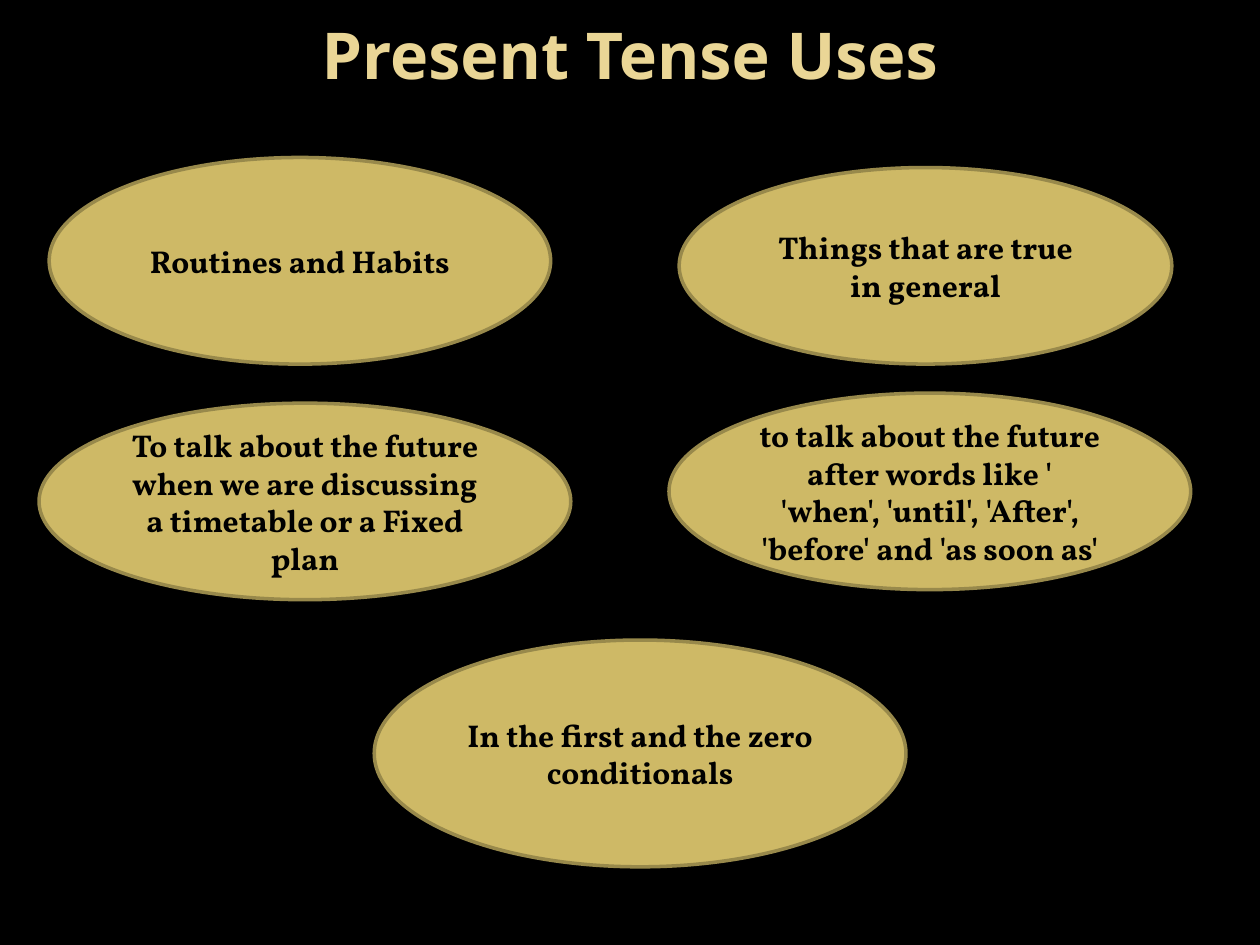
import dataclasses

import lxml.etree
import pptx
import pptx.dml.color
import pptx.enum.shapes
import pptx.enum.text
import pptx.oxml.ns
import pptx.slide
import pptx.text.text
import pptx.util

COLORS = {
    "background": "000000",
    "title": "EAD696",
    "oval": "CEB966",
    "outline": "98894B",
    "text": "000000",
}


@dataclasses.dataclass
class Use:
    wording: str
    left: float
    top: float
    width: float
    height: float = 1.56


USES = [
    Use("Routines and Habits", 0.39, 1.25, 3.98, 1.64),
    Use("Things that are true in general", 5.39, 1.33, 3.91),
    Use("In the first and the zero conditionals", 2.97, 5.08, 4.22, 1.8),
    Use("To talk about the future when we are discussing a timetable or a Fixed plan",
        0.31, 3.2, 4.22),
    Use("to talk about the future after words like ' 'when', 'until', 'After', "
        "'before' and 'as soon as'", 5.31, 3.12, 4.14),
]


def color(name: str) -> pptx.dml.color.RGBColor:
    return pptx.dml.color.RGBColor.from_string(COLORS[name])


def write(frame: pptx.text.text.TextFrame, wording: str, font: str,
          size: float, color_name: str) -> None:
    frame.word_wrap = True
    frame.vertical_anchor = pptx.enum.text.MSO_ANCHOR.MIDDLE
    paragraph = frame.paragraphs[0]
    paragraph.alignment = pptx.enum.text.PP_ALIGN.CENTER
    run = paragraph.add_run()
    run.text = wording
    run.font.name = font
    run.font.size = pptx.util.Pt(size)
    run.font.bold = True
    run.font.color.rgb = color(color_name)


def add_title(slide: pptx.slide.Slide, wording: str) -> None:
    heading = slide.shapes.title
    heading.left, heading.top = pptx.util.Inches(0.5), pptx.util.Inches(0.3)
    heading.width, heading.height = pptx.util.Inches(9), pptx.util.Inches(0.79)
    write(heading.text_frame, wording, "Noto Sans", 36.9, "title")
    paragraph = heading.text_frame.paragraphs[0]
    paragraph.add_line_break()
    line_break = paragraph._p[-1]
    lxml.etree.SubElement(line_break, pptx.oxml.ns.qn("a:rPr"), sz="3200")
    lxml.etree.SubElement(paragraph._p, pptx.oxml.ns.qn("a:endParaRPr"), sz="3200")


def add_use(slide: pptx.slide.Slide, use: Use) -> None:
    oval = slide.shapes.add_shape(
        pptx.enum.shapes.MSO_SHAPE.OVAL,
        pptx.util.Inches(use.left), pptx.util.Inches(use.top),
        pptx.util.Inches(use.width), pptx.util.Inches(use.height))
    oval.shadow.inherit = False
    oval.fill.solid()
    oval.fill.fore_color.rgb = color("oval")
    oval.line.color.rgb = color("outline")
    oval.line.width = pptx.util.Pt(2)
    write(oval.text_frame, use.wording, "Vollkorn", 18, "text")


def main() -> None:
    deck = pptx.Presentation()
    deck.slide_width = pptx.util.Inches(10)
    deck.slide_height = pptx.util.Inches(7.5)
    slide = deck.slides.add_slide(deck.slide_layouts[5])
    slide.background.fill.solid()
    slide.background.fill.fore_color.rgb = color("background")
    add_title(slide, "Present Tense Uses")
    for use in USES:
        add_use(slide, use)
    deck.save("out.pptx")


if __name__ == "__main__":
    main()
